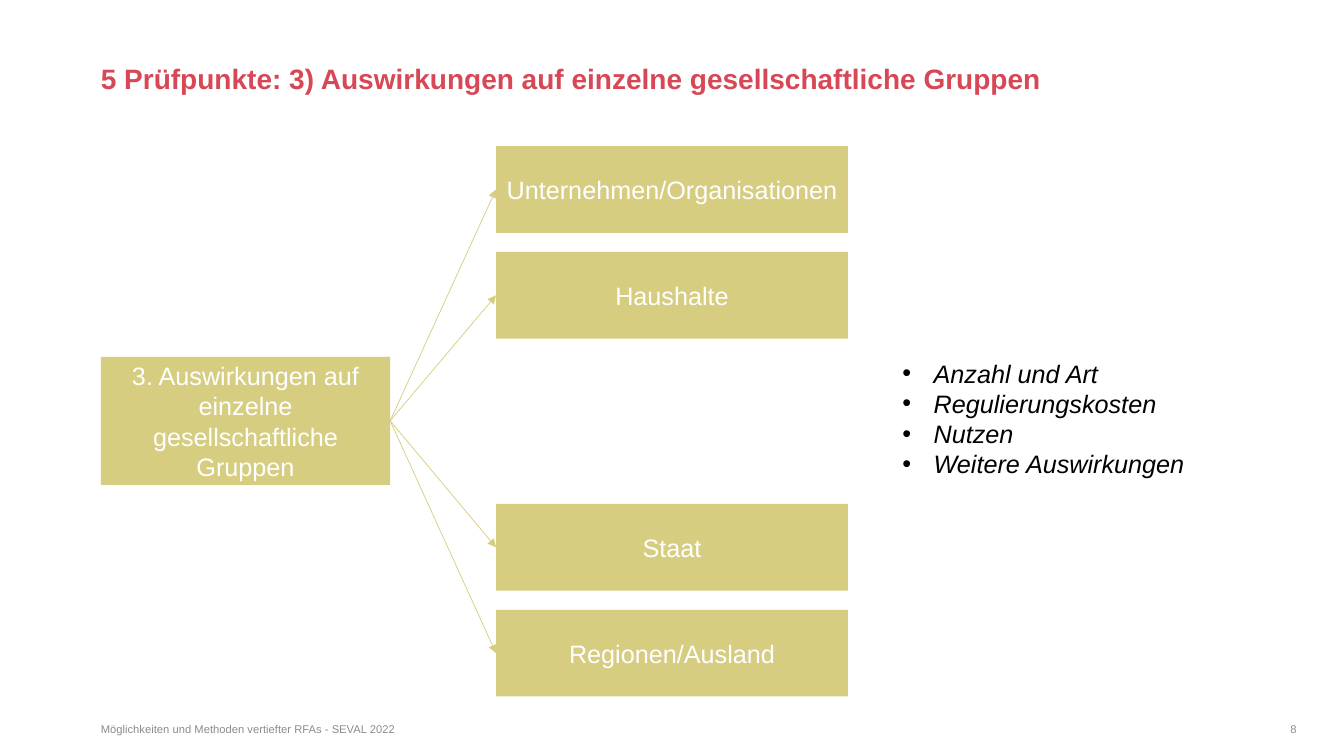
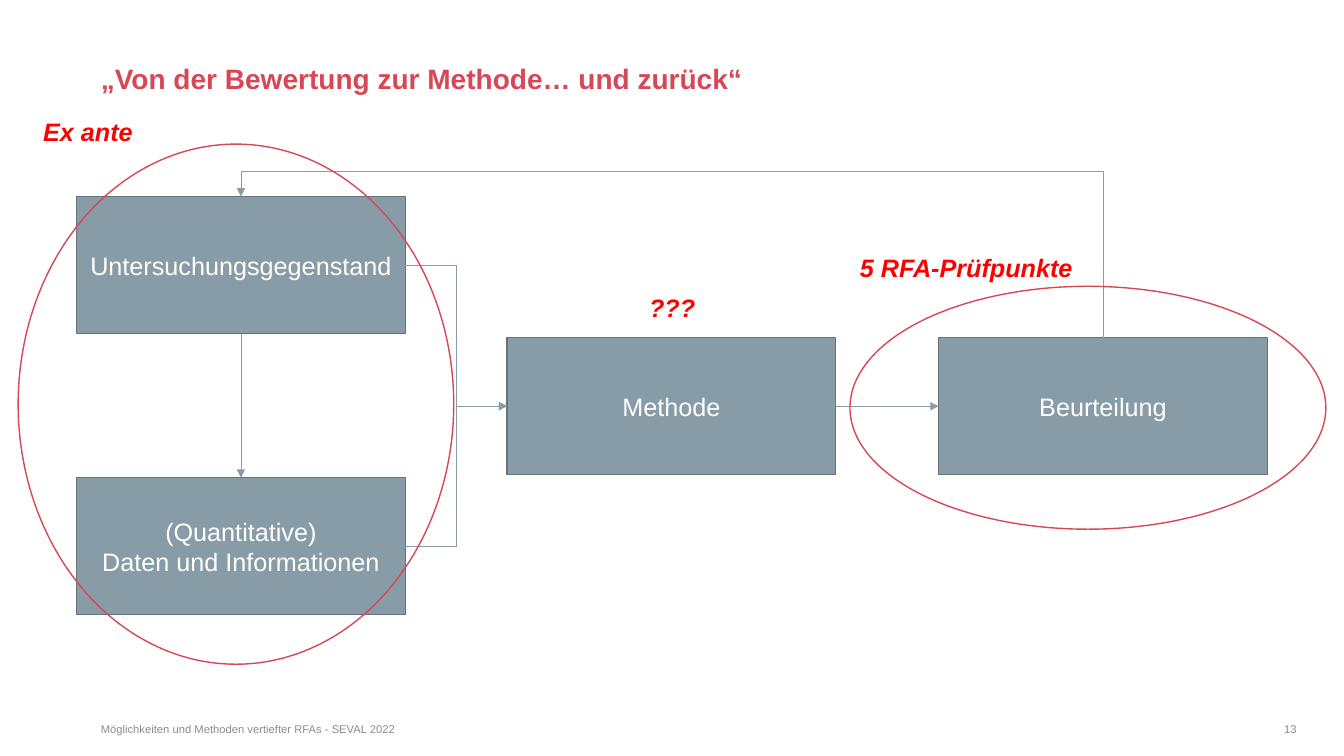
from lxml import etree
from pptx import Presentation
from pptx.dml.color import RGBColor
from pptx.enum.shapes import MSO_CONNECTOR, MSO_SHAPE
from pptx.enum.text import MSO_ANCHOR, MSO_AUTO_SIZE, PP_ALIGN
from pptx.oxml.ns import qn
from pptx.util import Inches, Pt

STRAIGHT, ELBOW = MSO_CONNECTOR.STRAIGHT, MSO_CONNECTOR.ELBOW
RECT, OVAL = MSO_SHAPE.RECTANGLE, MSO_SHAPE.OVAL
LEFT, CENTER, RIGHT = PP_ALIGN.LEFT, PP_ALIGN.CENTER, PP_ALIGN.RIGHT
TOP, MIDDLE = MSO_ANCHOR.TOP, MSO_ANCHOR.MIDDLE
NO_FIT, GROW = MSO_AUTO_SIZE.NONE, MSO_AUTO_SIZE.SHAPE_TO_FIT_TEXT
SIDE_TOP, SIDE_LEFT, SIDE_BOTTOM, SIDE_RIGHT = range(4)
TITLE_AND_BODY, TITLE_ONLY = 1, 5

FONT = "Arial"
RED, ALERT, GRAY = "D84755", "FF0000", "8C8C8C"
SAND, SLATE, SLATE_EDGE = "D6CD81", "879CA6", "64737B"
WHITE, BLACK = "FFFFFF", "000000"
FOOTER = "Möglichkeiten und Methoden vertiefter RFAs - SEVAL 2022"


def rgb(value):
    return RGBColor.from_string(value)


class Deck:
    """Holds the shared style and the slide being built."""

    def __init__(self):
        self.prs = Presentation()
        self.prs.slide_width, self.prs.slide_height = Inches(13.33), Inches(7.5)

    def new_slide(self, title, number, layout=TITLE_ONLY):
        self.slide = self.prs.slides.add_slide(self.prs.slide_layouts[layout])
        s = self.slide.shapes.title
        self.place(s, 1, 0.65, 11.86, 0.86)
        tf = s.text_frame
        self.no_margins(tf)
        tf.auto_size = NO_FIT
        tf.vertical_anchor = TOP
        self.add_text(tf, [title], 20, RED, bold=True)
        tf.paragraphs[0].line_spacing = 0.9
        self.footer(FOOTER, 1, 4.5, LEFT)
        self.footer(str(number), 9.63, 3.23, RIGHT)

    def place(self, s, x, y, w, h):
        s.left, s.top, s.width, s.height = map(Inches, (x, y, w, h))

    def no_margins(self, tf):
        tf.margin_left = tf.margin_right = tf.margin_top = tf.margin_bottom = 0

    def add_text(self, tf, lines, size, color, align=LEFT, bold=False,
                 italic=False, bullet=False):
        for i, line in enumerate(lines):
            p = tf.paragraphs[0] if i == 0 else tf.add_paragraph()
            p.alignment = align
            if bullet:
                self.bullet(p)
            r = p.add_run()
            r.text = line
            font = r.font
            font.name, font.size, font.color.rgb = FONT, Pt(size), rgb(color)
            font.bold, font.italic = bold, italic

    def bullet(self, p):
        pPr = p._p.get_or_add_pPr()
        pPr.set("marL", str(Inches(0.31)))
        pPr.set("indent", str(-Inches(0.31)))
        etree.SubElement(pPr, qn("a:buChar")).set("char", "•")
        p.space_before = Pt(0)

    def footer(self, text, x, w, align):
        tf = self.slide.shapes.add_textbox(
            *map(Inches, (x, 7.17, w, 0.26))).text_frame
        tf.word_wrap = True
        self.no_margins(tf)
        self.add_text(tf, [text], 8, GRAY, align)

    def bullets(self, lines, x, y, w, h):
        s = self.slide.placeholders[1]
        self.place(s, x, y, w, h)
        s.text_frame.auto_size = NO_FIT
        self.add_text(s.text_frame, lines, 18, BLACK, italic=True, bullet=True)

    def label(self, text, x, y, w):
        tf = self.slide.shapes.add_textbox(
            *map(Inches, (x, y, w, 0.4))).text_frame
        tf.word_wrap = False
        tf.auto_size = GROW
        self.add_text(tf, [text], 18, ALERT, bold=True, italic=True)

    def shape(self, kind, x, y, w, h, fill=None, line=None):
        s = self.slide.shapes.add_shape(kind, *map(Inches, (x, y, w, h)))
        s.shadow.inherit = False
        if fill:
            s.fill.solid()
            s.fill.fore_color.rgb = rgb(fill)
        else:
            s.fill.background()
        if line:
            s.line.color.rgb, s.line.width = rgb(line), Pt(1)
        else:
            s.line.fill.background()
        return s

    def box(self, lines, x, y, w, h, fill, line=None):
        s = self.shape(RECT, x, y, w, h, fill, line)
        tf = s.text_frame
        tf.word_wrap = True
        tf.vertical_anchor = MIDDLE
        self.add_text(tf, lines, 18, WHITE, CENTER)
        return s

    def ring(self, x, y, w, h):
        self.shape(OVAL, x, y, w, h, line=RED)

    def arrow(self, start, end, color, kind=STRAIGHT,
              sides=(SIDE_RIGHT, SIDE_LEFT)):
        c = self.slide.shapes.add_connector(kind, 0, 0, 0, 0)
        c.begin_connect(start, sides[0])
        c.end_connect(end, sides[1])
        c.line.color.rgb, c.line.width = rgb(color), Pt(0.5)
        ln = c._element.spPr.find(qn("a:ln"))
        etree.SubElement(ln, qn("a:tailEnd")).set("type", "triangle")
        etree.SubElement(c._element.spPr, qn("a:effectLst"))
        return c

    def loop_arrow(self, start, end, color, rise):
        """Lead from the top of start, over end by rise, down to its top."""
        c = self.arrow(start, end, color, ELBOW, (SIDE_TOP, SIDE_TOP))
        x1, x2 = c.begin_x, c.end_x
        y1, y2 = c.begin_y, c.end_y
        across, drop = x1 - x2, y1 - y2
        # A quarter turn swaps width and height around the same centre
        xfrm = c._element.spPr.find(qn("a:xfrm"))
        for name in ("flipH", "flipV"):
            xfrm.attrib.pop(name, None)
        c.left, c.top = (x1 + x2 - drop) // 2, (y1 + y2 - across) // 2
        c.width, c.height = drop, across
        xfrm.set("rot", str(270 * 60000))
        xfrm.set("flipV", "1")
        gd = etree.SubElement(c._element.spPr.find(
            qn("a:prstGeom")).find(qn("a:avLst")), qn("a:gd"))
        gd.set("name", "adj1")
        gd.set("fmla", f"val {round(100000 * (1 + Inches(rise) / drop))}")


def groups_slide(deck):
    deck.new_slide("5 Prüfpunkte: 3) Auswirkungen auf einzelne "
                   "gesellschaftliche Gruppen", 8, TITLE_AND_BODY)
    root = deck.box(["3. Auswirkungen auf einzelne gesellschaftliche Gruppen"],
                    1, 3.54, 2.87, 1.27, SAND)
    groups = [("Unternehmen/Organisationen", 1.45), ("Haushalte", 2.5),
              ("Staat", 5), ("Regionen/Ausland", 6.05)]
    for name, y in groups:
        group = deck.box([name], 4.92, y, 3.49, 0.86, SAND)
        deck.arrow(root, group, SAND)
    deck.bullets(["Anzahl und Art", "Regulierungskosten", "Nutzen",
                  "Weitere Auswirkungen"], 8.85, 3.5, 3.18, 1.31)


def method_slide(deck):
    deck.new_slide("„Von der Bewertung zur Methode… und zurück“", 13)
    subject, data, method, verdict = [
        deck.box(lines, x, y, 3.26, 1.36, SLATE, SLATE_EDGE)
        for lines, x, y in [
            (["Untersuchungsgegenstand"], 0.76, 1.95),
            (["(Quantitative)", "Daten und Informationen"], 0.76, 4.74),
            (["Methode"], 5.03, 3.35),
            (["Beurteilung"], 9.31, 3.35)]]
    for source in (subject, data):
        deck.arrow(source, method, SLATE, ELBOW)
    deck.arrow(method, verdict, SLATE)
    deck.arrow(subject, data, SLATE, sides=(SIDE_BOTTOM, SIDE_TOP))
    deck.loop_arrow(verdict, subject, SLATE, 0.25)
    deck.ring(0.18, 1.43, 4.32, 5.16)
    deck.ring(8.43, 2.84, 4.72, 2.41)
    deck.label("5 RFA-Prüfpunkte", 8.43, 2.45, 2.33)
    deck.label("Ex ante", 0.33, 1.11, 1.1)
    deck.label("???", 6.34, 2.85, 0.66)


def main():
    deck = Deck()
    groups_slide(deck)
    method_slide(deck)
    deck.prs.save("out.pptx")


if __name__ == "__main__":
    main()
